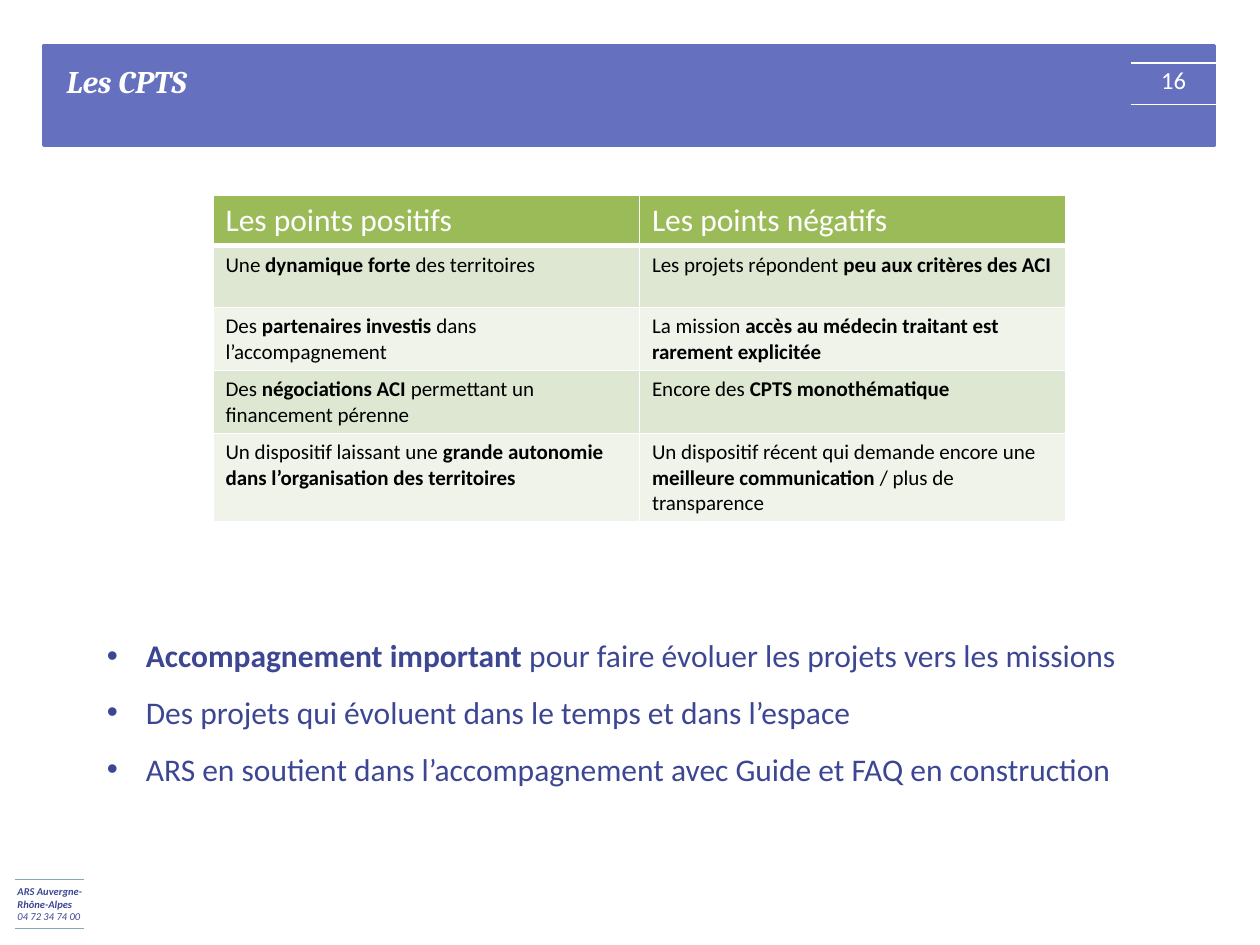
from lxml.etree import SubElement as Sub
from pptx import Presentation
from pptx.dml.color import RGBColor as RGB
from pptx.enum.shapes import MSO_CONNECTOR as Link, MSO_SHAPE as Form
from pptx.enum.text import MSO_AUTO_SIZE as Auto, PP_ALIGN as Align
from pptx.oxml.ns import qn
from pptx.util import Inches, Pt

WIDE, HIGH = Inches(10), Inches(7.5)
WHITE = RGB(0xFF, 0xFF, 0xFF)
BLACK = RGB(0, 0, 0)
BLUE = RGB(0x65, 0x70, 0xBF)
NAVY = RGB(0x3C, 0x46, 0x93)
TEAL = RGB(0x7F, 0xAD, 0xB3)
GREEN = RGB(0x9B, 0xBB, 0x59)
BANDS = RGB(0xDE, 0xE7, 0xD1), RGB(0xEF, 0xF3, 0xEA)

HEAD = "Les points positifs", "Les points négatifs"
ROWS = [
    ("Une *dynamique forte *des territoires",
     "Les projets répondent *peu aux critères des ACI*"),
    ("Des *partenaires investis *dans l’accompagnement",
     "La mission *accès au médecin traitant est rarement explicitée*"),
    ("Des *négociations ACI *permettant un financement pérenne",
     "Encore des *CPTS monothématique*"),
    ("Un dispositif laissant une *grande autonomie dans l’organisation des territoires*",
     "Un dispositif récent qui demande encore une *meilleure communication* / plus de transparence"),
]
POINTS = [
    "*Accompagnement important *pour faire évoluer les projets vers les missions",
    "Des projets qui évoluent dans le temps et dans l’espace",
    "ARS en soutient dans l’accompagnement avec Guide et FAQ en construction",
]


def px(share):
    return round(WIDE * share / 100)


def py(share):
    return round(HIGH * share / 100)


def area(left, top, width, height):
    return px(left), py(top), px(width), py(height)


def write(para, text, color, size, name="Calibri", **more):
    for turn, part in enumerate(text.split("*")):
        if not part:
            continue
        for step, piece in enumerate(part.split("\n")):
            if step:
                para.add_line_break()
            run = para.add_run()
            run.text = piece
            style = {"name": name, "size": Pt(size), "bold": turn % 2 == 1, **more}
            for key, value in style.items():
                setattr(run.font, key, value)
            run.font.color.rgb = color


def bullet(para):
    props = para._p.get_or_add_pPr()
    props.set("marL", str(Inches(0.31)))
    props.set("indent", str(-Inches(0.31)))
    Sub(props, qn("a:buFont"), typeface="Arial")
    Sub(props, qn("a:buChar"), char="•")


def label(slide, place, lines, color, size, form=None, dots=False, grow=True, **more):
    frame = slide.shapes.add_textbox(*area(*place)).text_frame
    frame.word_wrap = True
    frame.auto_size = Auto.SHAPE_TO_FIT_TEXT if grow else Auto.NONE
    for turn, line in enumerate(lines):
        para = frame.add_paragraph() if turn else frame.paragraphs[0]
        if dots:
            bullet(para)
        for key, value in (form or {}).items():
            setattr(para, key, value)
        write(para, line, color, size, **more)


def band(slide, place, color):
    box = slide.shapes.add_shape(Form.RECTANGLE, *area(*place))
    box.shadow.inherit = False
    box.fill.solid()
    box.fill.fore_color.rgb = color
    box.line.color.rgb = color
    box.line.width = Pt(2)


def rule(slide, left, right, top, color, width):
    line = slide.shapes.add_connector(Link.STRAIGHT, px(left), py(top), px(right), py(top))
    line.line.color.rgb = color
    line.line.width = Pt(width)
    Sub(line._element.spPr, qn("a:effectLst"))


def cell_set(cell, text, fill, color, size, base):
    props = cell._tc.get_or_add_tcPr()
    for side, width in {"L": 1, "R": 1, "T": 1, "B": base}.items():
        edge = Sub(props, qn("a:ln" + side), w=str(Pt(width)))
        Sub(Sub(edge, qn("a:solidFill")), qn("a:srgbClr"), val=str(WHITE))
    cell.fill.solid()
    cell.fill.fore_color.rgb = fill
    write(cell.text_frame.paragraphs[0], text, color, size)


def grid(slide, place):
    data = [HEAD, *ROWS]
    table = slide.shapes.add_table(len(data), len(HEAD), *area(*place)).table
    for row, texts in enumerate(data):
        table.rows[row].height = py(6.53 if row else 5.2)
        look = (BANDS[(row - 1) % 2], BLACK, 12, 1) if row else (GREEN, WHITE, 18, 3)
        for col, text in enumerate(texts):
            cell_set(table.cell(row, col), text, *look)


def main():
    deck = Presentation()
    deck.slide_width, deck.slide_height = WIDE, HIGH
    slide = deck.slides.add_slide(deck.slide_layouts[6])
    band(slide, (3.5, 4.8, 92.9, 10.53), BLUE)
    for top in (6.67, 11.07):
        rule(slide, 89.8, 96.5, top, WHITE, 1)
    label(slide, (0.4, 93.07, 7.9, 5.33),
          ["*ARS Auvergne-\nRhône-Alpes*", "04 72 34 74 00"],
          NAVY, 6, {"line_spacing": Pt(7)}, italic=True)
    for top in (98.27, 93.07):
        rule(slide, 1.2, 6.7, top, TEAL, 0.75)
    label(slide, (89.8, 6.27, 6.7, 4.53), ["16"], WHITE, 14,
          {"alignment": Align.CENTER}, grow=False)
    label(slide, (4.3, 5.87, 85, 5.33), ["*Les CPTS*"], WHITE, 18,
          name="Cambria", italic=True)
    grid(slide, (16.9, 20.67, 67.7, 31.32))
    label(slide, (7.5, 64.67, 86.6, 19.47), POINTS, NAVY, 18,
          {"line_spacing": 1.5}, dots=True)
    deck.save("out.pptx")


if __name__ == "__main__":
    main()
